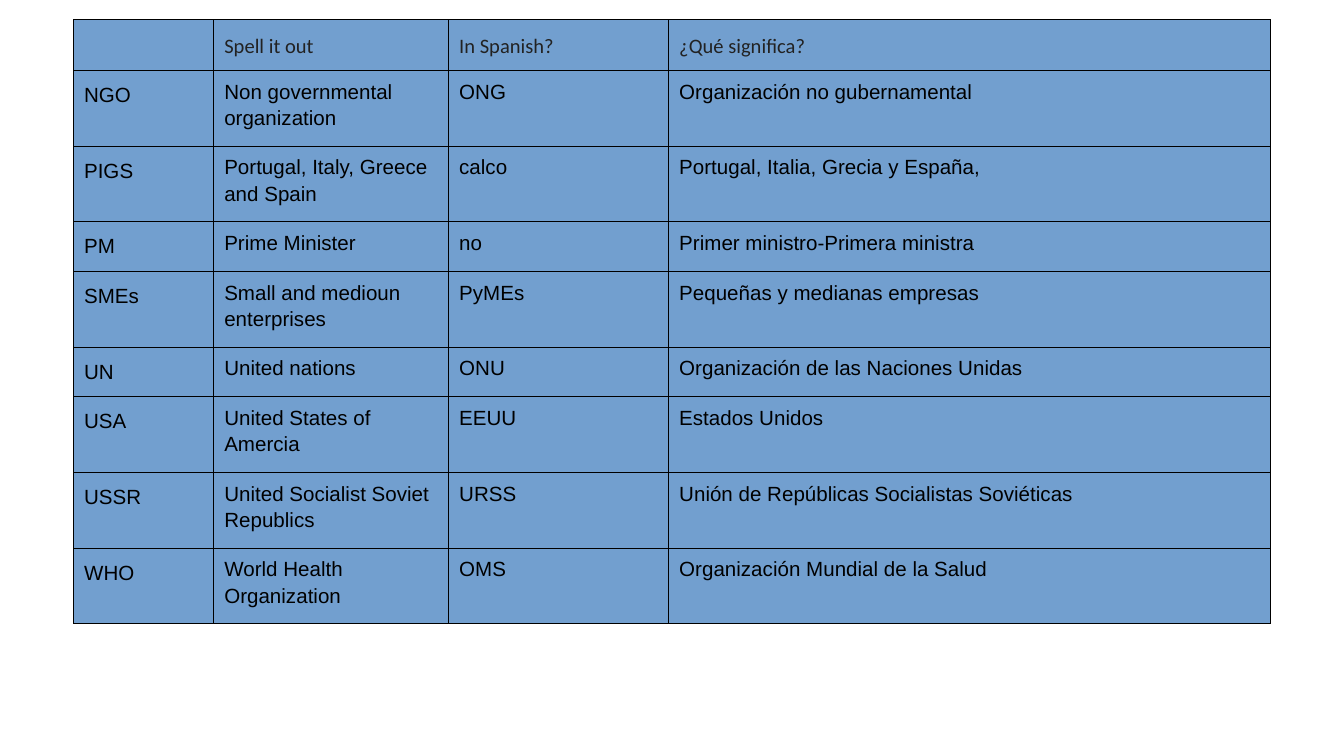
from lxml.etree import SubElement
from pptx import Presentation
from pptx.dml.color import RGBColor
from pptx.oxml.ns import qn
from pptx.util import Cm, Pt

COLORS = {"cell": "729FCF", "border": "000000", "heading": "222222", "body": "000000"}

HEADINGS = ["", "Spell it out", "In Spanish?", "¿Qué significa?"]
ACRONYMS = [
    ["NGO", "Non governmental organization", "ONG", "Organización no gubernamental"],
    ["PIGS", "Portugal, Italy, Greece and Spain", "calco",
     "Portugal, Italia, Grecia y España,"],
    ["PM", "Prime Minister", "no", "Primer ministro-Primera ministra"],
    ["SMEs", "Small and medioun enterprises", "PyMEs", "Pequeñas y medianas empresas"],
    ["UN", "United nations", "ONU", "Organización de las Naciones Unidas"],
    ["USA", "United States of Amercia", "EEUU", "Estados Unidos"],
    ["USSR", "United Socialist Soviet Republics", "URSS",
     "Unión de Repúblicas Socialistas Soviéticas"],
    ["WHO", "World Health Organization", "OMS", "Organización Mundial de la Salud"],
]

# Lengths in centimetres
COLUMN_WIDTHS = [2.65, 4.44, 4.16, 11.38]
HEADING_HEIGHT, ONE_LINE_HEIGHT, TWO_LINE_HEIGHT = 0.96, 0.94, 1.43
ONE_LINE_ROWS = {"PM", "UN"}


def write_text(cell, text, font="Arial", size=11, color="body", spacing=1.15):
    paragraph = cell.text_frame.paragraphs[0]
    paragraph.line_spacing = spacing
    if not text:
        # Keeps an empty cell from growing to the default text size
        SubElement(paragraph._p, qn("a:endParaRPr"), sz=str(size * 100))
        return
    run = paragraph.add_run()
    run.text = text
    run.font.name = font
    run.font.size = Pt(size)
    run.font.color.rgb = RGBColor.from_string(COLORS[color])


def format_cell(cell):
    cell.margin_left = cell.margin_right = Cm(0.2)
    cell.margin_top = cell.margin_bottom = Cm(0.13)
    properties = cell._tc.get_or_add_tcPr()
    for side in ("lnL", "lnR", "lnT", "lnB"):
        line = SubElement(properties, qn(f"a:{side}"), w=str(Pt(0.45)))
        fill = SubElement(line, qn("a:solidFill"))
        SubElement(fill, qn("a:srgbClr"), val=COLORS["border"])
    cell.fill.solid()
    cell.fill.fore_color.rgb = RGBColor.from_string(COLORS["cell"])


def add_acronym_table(slide, left, top, width):
    rows = [HEADINGS] + ACRONYMS
    heights = [HEADING_HEIGHT] + [
        ONE_LINE_HEIGHT if row[0] in ONE_LINE_ROWS else TWO_LINE_HEIGHT
        for row in ACRONYMS
    ]
    frame = slide.shapes.add_table(
        len(rows), len(HEADINGS), Cm(left), Cm(top), Cm(width), Cm(sum(heights)))
    table = frame.table
    table.first_row = table.horz_banding = False

    # Grid
    scale = width / sum(COLUMN_WIDTHS)
    for column, column_width in zip(table.columns, COLUMN_WIDTHS):
        column.width = Cm(column_width * scale)
    for row, height in zip(table.rows, heights):
        row.height = Cm(height)

    # Cells: headings and acronyms have the wider line spacing
    for row_index, texts in enumerate(rows):
        for column_index, text in enumerate(texts):
            cell = table.cell(row_index, column_index)
            format_cell(cell)
            if row_index == 0:
                write_text(cell, text, font="Calibri", color="heading", spacing=1.29)
            else:
                write_text(cell, text, spacing=1.15 if column_index else 1.29)


def main():
    presentation = Presentation()
    presentation.slide_width = Cm(25.4)
    presentation.slide_height = Cm(14.29)
    slide = presentation.slides.add_slide(presentation.slide_layouts[6])
    add_acronym_table(slide, left=1.39, top=0.37, width=22.63)
    presentation.save("out.pptx")


if __name__ == "__main__":
    main()
